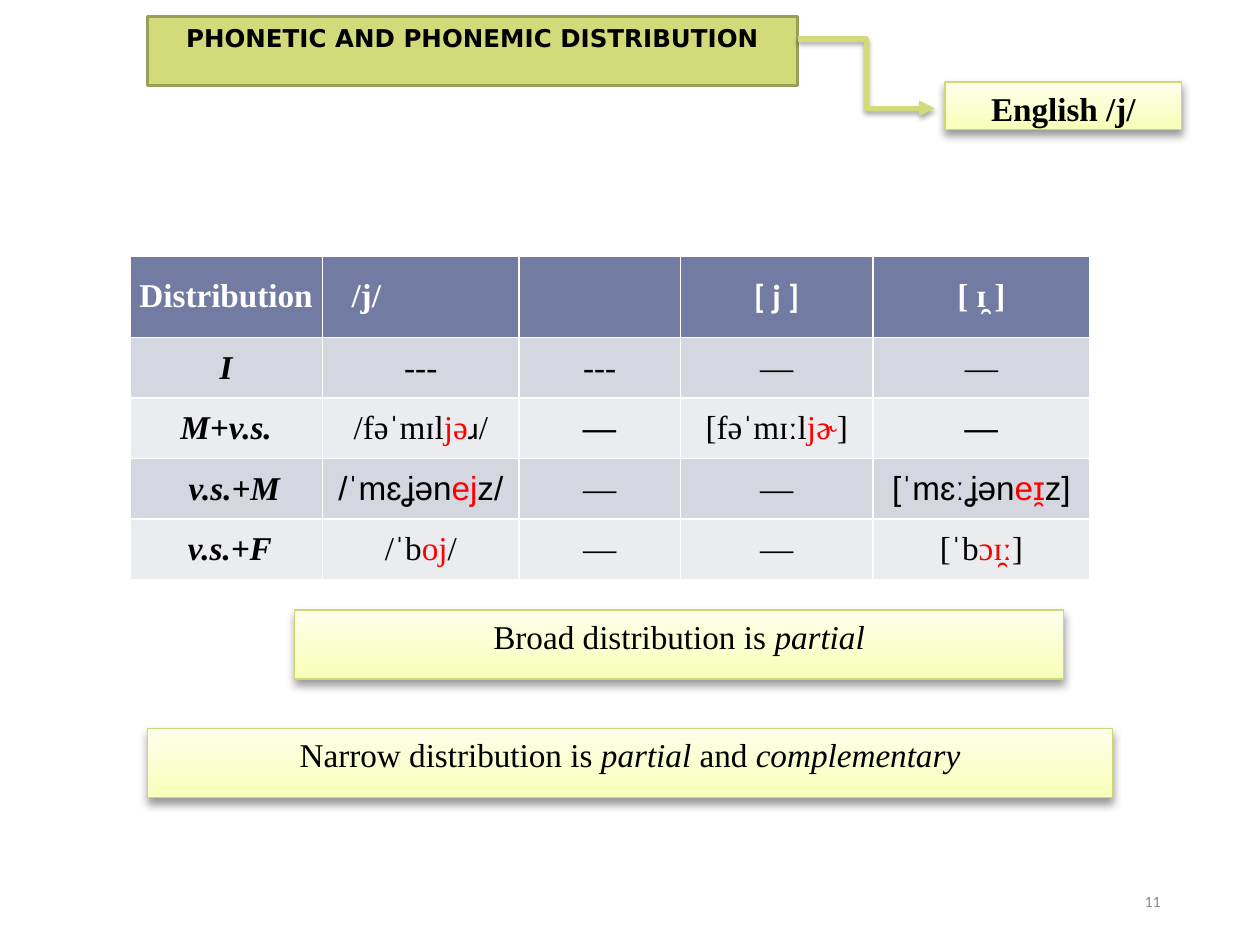
"""Build a slide on the phonetic and phonemic distribution of English /j/."""
from lxml import etree
from pptx import Presentation
from pptx.dml.color import RGBColor
from pptx.enum.shapes import MSO_CONNECTOR, MSO_SHAPE
from pptx.enum.text import MSO_ANCHOR as ANCHOR, MSO_AUTO_SIZE, PP_ALIGN as ALIGN
from pptx.oxml.ns import qn
from pptx.util import Inches, Pt

SERIF = "Times New Roman"


def style(font, name, size, color="000000", bold=False, italic=False):
    font.name, font.size, font.bold, font.italic = name, Pt(size), bold, italic
    font.color.rgb = RGBColor.from_string(color)


def add_shadow(sp, alpha, blur, dist):
    effects = etree.SubElement(sp._element.spPr, qn("a:effectLst"))
    outer = etree.SubElement(effects, qn("a:outerShdw"), blurRad=str(Pt(blur)),
                             dist=str(Pt(dist)), dir="5400000", rotWithShape="0")
    black = etree.SubElement(outer, qn("a:srgbClr"), val="000000")
    etree.SubElement(black, qn("a:alpha"), val=str(alpha * 1000))


prs = Presentation()
prs.slide_width, prs.slide_height = Inches(10), Inches(7.5)
col, row = prs.slide_width // 100, prs.slide_height // 75
s = prs.slides.add_slide(prs.slide_layouts[5])

title = s.shapes.title
title.left, title.top = int(11.7 * col), int(1.3 * row)
title.width, title.height = int(51.6 * col), int(5.5 * row)
title.fill.solid()
title.fill.fore_color.rgb = RGBColor.from_string("D2DA7A")
title.line.color.rgb = RGBColor.from_string("999F59")
title.line.width = Pt(2)
title.text = "PHONETIC AND PHONEMIC DISTRIBUTION"
tf = title.text_frame
tf.auto_size, tf.vertical_anchor = MSO_AUTO_SIZE.NONE, ANCHOR.TOP
tf.margin_left = tf.margin_right = tf.margin_top = tf.margin_bottom = Inches(0.05)
tf.paragraphs[0].alignment = ALIGN.CENTER
style(tf.paragraphs[0].font, "DejaVu Sans", 14, bold=True)

boxes = [
    (75, 6.5, 18.8, 3.8, True, "English /j/"),
    (23.4, 48.4, 61, 5.5, False, "Broad distribution is |partial"),
    (11.7, 57.8, 76.6, 5.5, False,
     "Narrow distribution is |partial| and |complementary"),
]
for x, y, w, h, bold, text in boxes:
    sp = s.shapes.add_shape(MSO_SHAPE.RECTANGLE, int(x * col), int(y * row),
                            int(w * col), int(h * row))
    sp.fill.gradient()
    sp.fill.gradient_angle = 90
    for stop, color in zip(sp.fill.gradient_stops, ("F8FFB8", "FDFFEB")):
        stop.color.rgb = RGBColor.from_string(color)
    sp.line.color.rgb = RGBColor.from_string("CFD775")
    sp.line.width = Pt(0.75)
    add_shadow(sp, 40, 5, 3)
    tf = sp.text_frame
    tf.word_wrap, tf.vertical_anchor = True, ANCHOR.TOP
    tf.margin_left = tf.margin_right = tf.margin_top = tf.margin_bottom = Inches(0.05)
    p = tf.paragraphs[0]
    p.alignment = ALIGN.CENTER
    for i, part in enumerate(text.split("|")):
        r = p.add_run()
        r.text = part
        style(r.font, SERIF, 19, bold=bold, italic=i % 2 == 1)

rows = [
    ["Distribution", "/j/", "", "[ j ]", "[ ɪ̯ ]"],
    ["I", "---", "---", "—", "—"],
    ["M+v.s.", "/fəˈmɪl|jə|ɹ|/", "—", "[fəˈmɪːl|jɚ|]", "—"],
    ["v.s.+M", "/ˈmɛʝən|ej|z/", "—", "—", "[ˈmɛːʝən|eɪ̯|z]"],
    ["v.s.+F", "/ˈb|oj|/", "—", "—", "[ˈb|ɔɪ̯ː|]"],
]
fonts = {(0, 3): "Calibri", (3, 1): "Arial", (3, 4): "Arial"}
indents = {(0, 1): 0.23, (3, 0): 0.18, (4, 0): 0.11}
table = s.shapes.add_table(5, 5, int(10.3 * col), int(20.3 * row),
                           int(76.2 * col), int(25.7 * row)).table
for c, w in zip(table.columns, (15.3, 15.6, 12.8, 15.3, 17.2)):
    c.width = int(w * col)
for i, texts in enumerate(rows):
    table.rows[i].height = int((4.8 if i else 6.5) * row)
    for j, text in enumerate(texts):
        cell = table.cell(i, j)
        cell.fill.solid()
        fill = "727CA3" if i == 0 else "D4D6E0" if i % 2 else "EBECF0"
        cell.fill.fore_color.rgb = RGBColor.from_string(fill)
        cell.vertical_anchor = ANCHOR.MIDDLE
        cell.margin_right = cell.margin_top = cell.margin_bottom = Inches(0.05)
        cell.margin_left = Inches(indents.get((i, j), 0.05))
        p = cell.text_frame.paragraphs[0]
        p.alignment = ALIGN.LEFT if (i, j) == (0, 1) else ALIGN.CENTER
        strong = j == 0 or (i == 2 and text == "—")
        for k, part in enumerate(text.split("|")):
            r = p.add_run()
            r.text = part
            name, size = fonts.get((i, j), SERIF), 19
            if part == "ɹ":
                name, size = "Calibri", 18
            color = "FFFFFF" if i == 0 else "FF0000" if k == 1 else "000000"
            style(r.font, name, size, color, i == 0 or strong, i > 0 and strong)

arrow = s.shapes.add_connector(MSO_CONNECTOR.ELBOW, int(63.3 * col), int(3.1 * row),
                               int(74.2 * col), int(8.6 * row))
arrow.line.color.rgb = RGBColor.from_string("D2DA7A")
arrow.line.width = Pt(3)
etree.SubElement(arrow.line._get_or_add_ln(), qn("a:tailEnd"), type="triangle")
add_shadow(arrow, 35, 3, 1.8)

number = s.shapes.add_textbox(int(70.6 * col), int(69.5 * row),
                              int(22.5 * col), 4 * row)
tf = number.text_frame
tf.word_wrap, tf.vertical_anchor = True, ANCHOR.MIDDLE
p = tf.paragraphs[0]
p.text, p.alignment = "11", ALIGN.RIGHT
style(p.font, "Calibri", 9, "8C8C8C")

prs.save("out.pptx")
